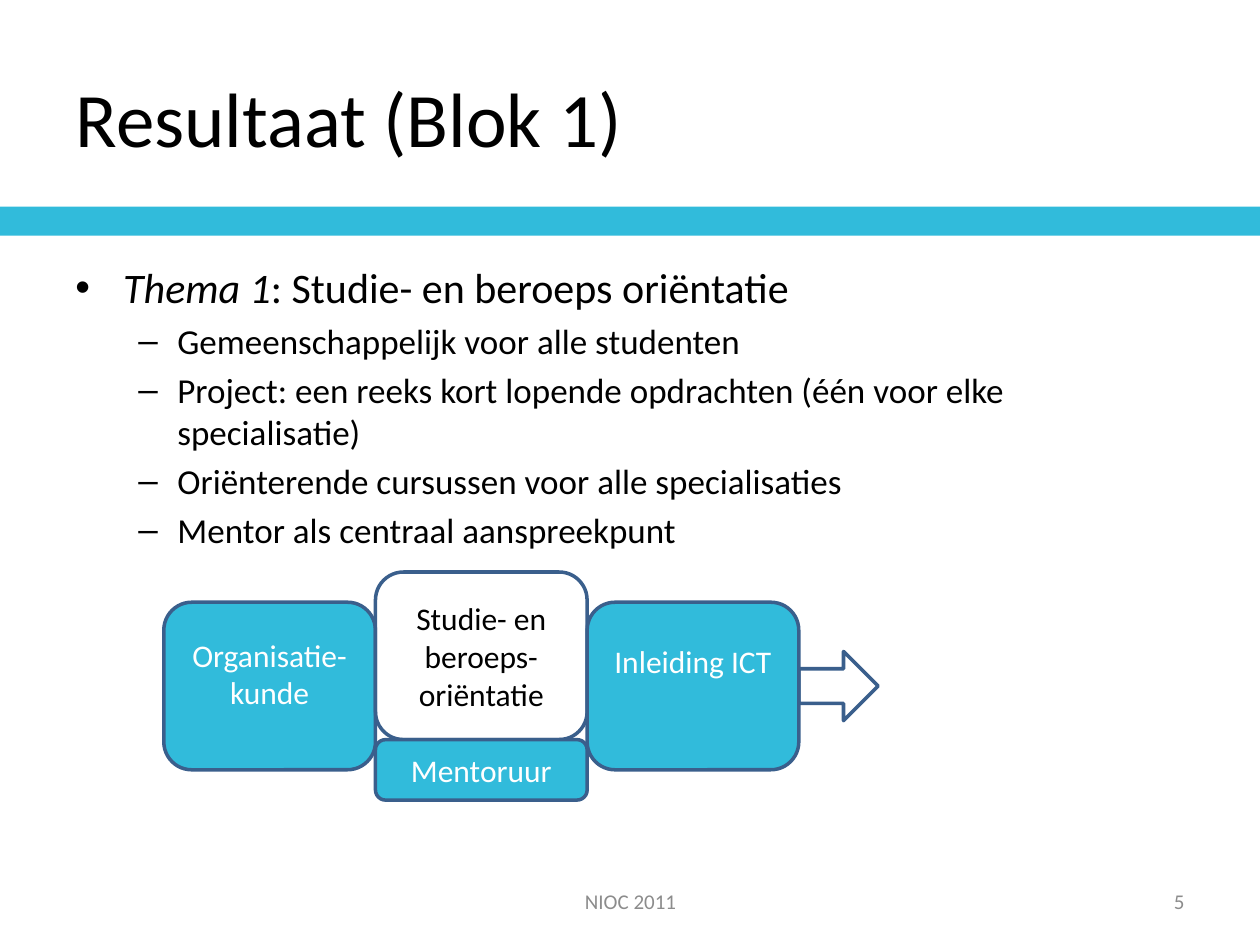
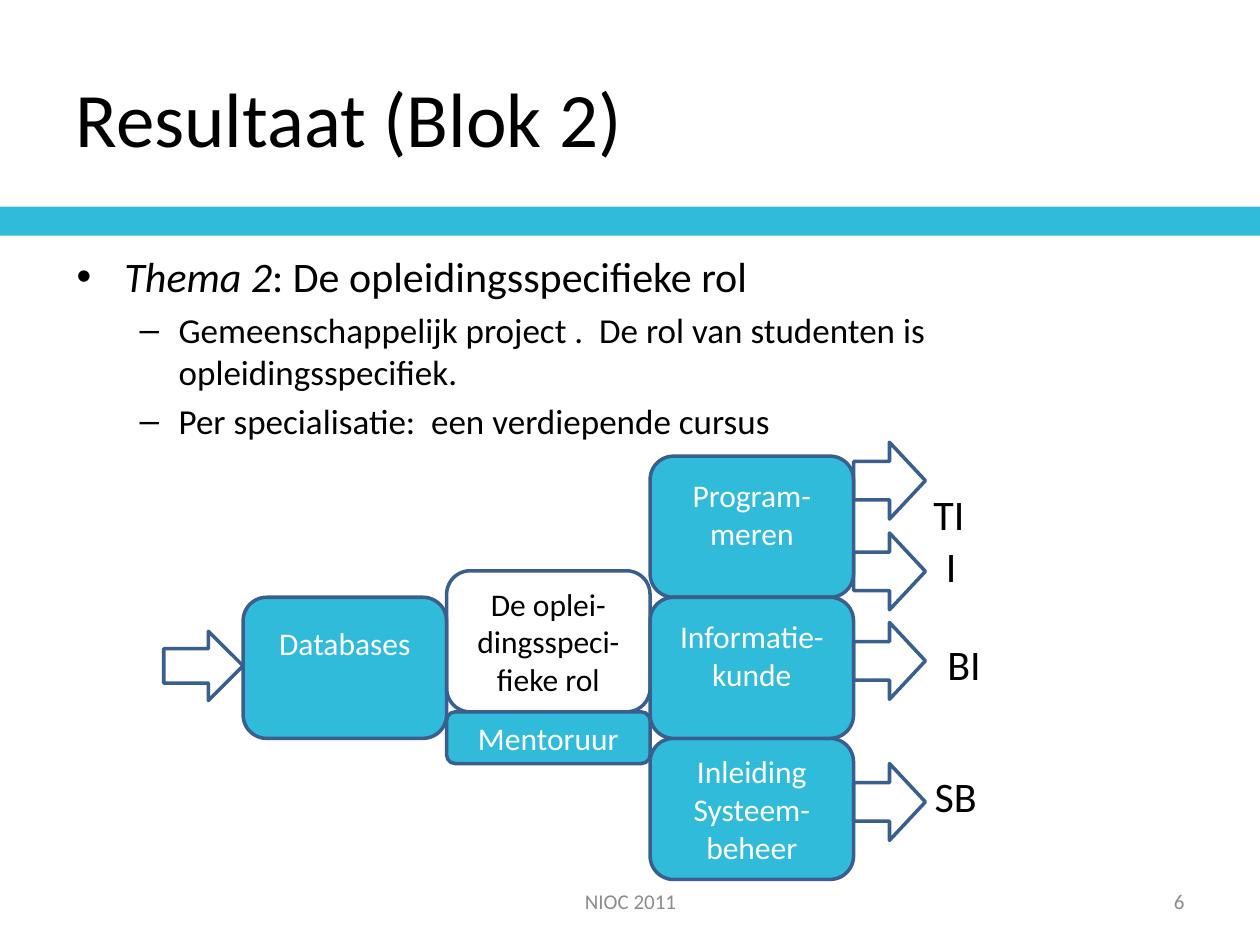
import pptx
import pptx.dml.color
import pptx.enum.shapes
import pptx.enum.text
import pptx.oxml.ns
import pptx.util
from dataclasses import dataclass
from lxml import etree

Inches = pptx.util.Inches
Pt = pptx.util.Pt
RGB = pptx.dml.color.RGBColor
MSO = pptx.enum.shapes.MSO_SHAPE
ALIGN = pptx.enum.text.PP_ALIGN
ANCHOR = pptx.enum.text.MSO_ANCHOR


@dataclass
class Theme:
    font: str = "Calibri"
    accent: RGB = RGB(0x31, 0xBB, 0xDB)
    outline: RGB = RGB(0x3A, 0x5F, 0x8C)
    black: RGB = RGB(0, 0, 0)
    white: RGB = RGB(0xFF, 0xFF, 0xFF)
    grey: RGB = RGB(0x8C, 0x8C, 0x8C)
    title: int = 44
    theme_line: int = 24
    point: int = 20
    block: int = 18
    footer: int = 12


theme = Theme()


def write(p, text, size=theme.block, color=theme.black, align=ALIGN.LEFT,
          italic=False, bullet=None, margin=0, hang=0, before=0):
    if bullet:
        pPr = p._p.get_or_add_pPr()
        pPr.set("marL", str(Inches(margin)))
        pPr.set("indent", str(-Inches(hang)))
        bu_font = etree.SubElement(pPr, pptx.oxml.ns.qn("a:buFont"))
        bu_font.set("typeface", "Arial")
        etree.SubElement(pPr, pptx.oxml.ns.qn("a:buChar")).set("char", bullet)
    p.alignment = align
    p.space_before = Pt(before)
    r = p.add_run()
    r.text = text
    r.font.name = theme.font
    r.font.size = Pt(size)
    r.font.italic = italic
    r.font.color.rgb = color


def draw(s, kind, at, fill=None, line=theme.outline):
    sp = s.shapes.add_shape(kind, *map(Inches, at))
    sp.shadow.inherit = False
    if fill is None:
        sp.fill.background()
    else:
        sp.fill.solid()
        sp.fill.fore_color.rgb = fill
    if line is None:
        sp.line.fill.background()
    else:
        sp.line.color.rgb = line
        sp.line.width = Pt(2)
    return sp


W1, H1, X1 = 1.68, 1.33, 1.3
W2, H2, X2, Y2 = 1.615, 1.12, 1.93, 3.62
COL2 = [X2 + i * W2 for i in range(4)]
ROW2 = [Y2 + i * H2 for i in range(3)]

slides = [
    dict(
        number="5", title="Resultaat (Blok 1)", body=(0.5, 2.03, 9, 2.11),
        theme_name="Thema 1", theme_text=": Studie- en beroeps oriëntatie",
        points=["Gemeenschappelijk voor alle studenten",
                "Project: een reeks kort lopende opdrachten (één voor elke specialisatie)",
                "Oriënterende cursussen voor alle specialisaties",
                "Mentor als centraal aanspreekpunt"],
        blocks=[("Organisatie-kunde", (X1, 4.78, W1, H1), theme.accent, 0.2),
                ("Studie- en beroeps-oriëntatie", (X1 + W1, 4.54, W1, H1), None, 0),
                ("Inleiding ICT", (X1 + 2 * W1, 4.78, W1, H1), theme.accent, 0.4),
                ("Mentoruur", (X1 + W1, 5.87, W1, 0.48), theme.accent, 0)],
        arrows=[(X1 + 3 * W1, 5.17, 0.63, 0.55)],
        labels=[]),
    dict(
        number="6", title="Resultaat (Blok 2)", body=(0.51, 1.94, 9, 1.73),
        theme_name="Thema 2", theme_text=": De opleidingsspecifieke rol",
        points=["Gemeenschappelijk project .  De rol van studenten is opleidingsspecifiek.",
                "Per specialisatie:  een verdiepende cursus"],
        blocks=[("Program-meren", (COL2[2], ROW2[0], W2, H2), theme.accent, 0.2),
                ("Databases", (COL2[0], ROW2[1], W2, H2), theme.accent, 0.4),
                ("Inleiding Systeem-beheer", (COL2[2], ROW2[2], W2, H2), theme.accent, 0),
                ("Informatie-kunde", (COL2[2], ROW2[1], W2, H2), theme.accent, 0.2),
                ("De oplei-dingsspeci-fieke rol", (COL2[1], 4.53, W2, H2), None, 0),
                ("Mentoruur", (COL2[1], 5.65, W2, 0.41), theme.accent, 0)],
        arrows=[(1.3, 5.01, 0.63, 0.55)]
               + [(COL2[3], y, 0.57, 0.61) for y in (3.51, 4.23, 4.94, 6.06)],
        labels=[("TI", 7.31, 3.83), ("I", 7.41, 4.24),
                ("BI", 7.42, 5.02), ("SB", 7.32, 6.07)]),
]

prs = pptx.Presentation()
prs.slide_width, prs.slide_height = Inches(10), Inches(7.5)

for data in slides:
    s = prs.slides.add_slide(prs.slide_layouts[5])
    draw(s, MSO.RECTANGLE, (0, 1.64, 10, 0.23), theme.accent, None)

    title = s.shapes.title
    title.left, title.top, title.width, title.height = map(Inches, (0.5, 0.3, 7.7, 1.25))
    title.text_frame.vertical_anchor = ANCHOR.MIDDLE
    write(title.text_frame.paragraphs[0], data["title"], size=theme.title)

    tf = s.shapes.add_textbox(*map(Inches, data["body"])).text_frame
    tf.word_wrap = True
    p = tf.paragraphs[0]
    write(p, data["theme_name"], size=theme.theme_line, italic=True,
          bullet="•", margin=0.38, hang=0.38)
    write(p, data["theme_text"], size=theme.theme_line)
    for point in data["points"]:
        write(tf.add_paragraph(), point, size=theme.point,
              bullet="–", margin=0.81, hang=0.31, before=4)

    for text, left, width, align in [("NIOC 2011", 3.42, 3.17, ALIGN.CENTER),
                                     (data["number"], 7.17, 2.33, ALIGN.RIGHT)]:
        tf = s.shapes.add_textbox(Inches(left), Inches(6.95), Inches(width), Inches(0.4)).text_frame
        tf.word_wrap = True
        tf.vertical_anchor = ANCHOR.MIDDLE
        write(tf.paragraphs[0], text, size=theme.footer, color=theme.grey, align=align)

    for text, at, fill, lift in data["blocks"]:
        tf = draw(s, MSO.ROUNDED_RECTANGLE, at, fill).text_frame
        tf.word_wrap = True
        tf.vertical_anchor = ANCHOR.MIDDLE
        tf.margin_bottom = Inches(0.05 + lift)
        write(tf.paragraphs[0], text, align=ALIGN.CENTER,
              color=theme.white if fill else theme.black)

    for at in data["arrows"]:
        draw(s, MSO.RIGHT_ARROW, at)

    for text, left, top in data["labels"]:
        tf = s.shapes.add_textbox(Inches(left), Inches(top), Inches(0.7), Inches(0.5)).text_frame
        tf.word_wrap = True
        write(tf.paragraphs[0], text, size=theme.theme_line)

prs.save("out.pptx")
